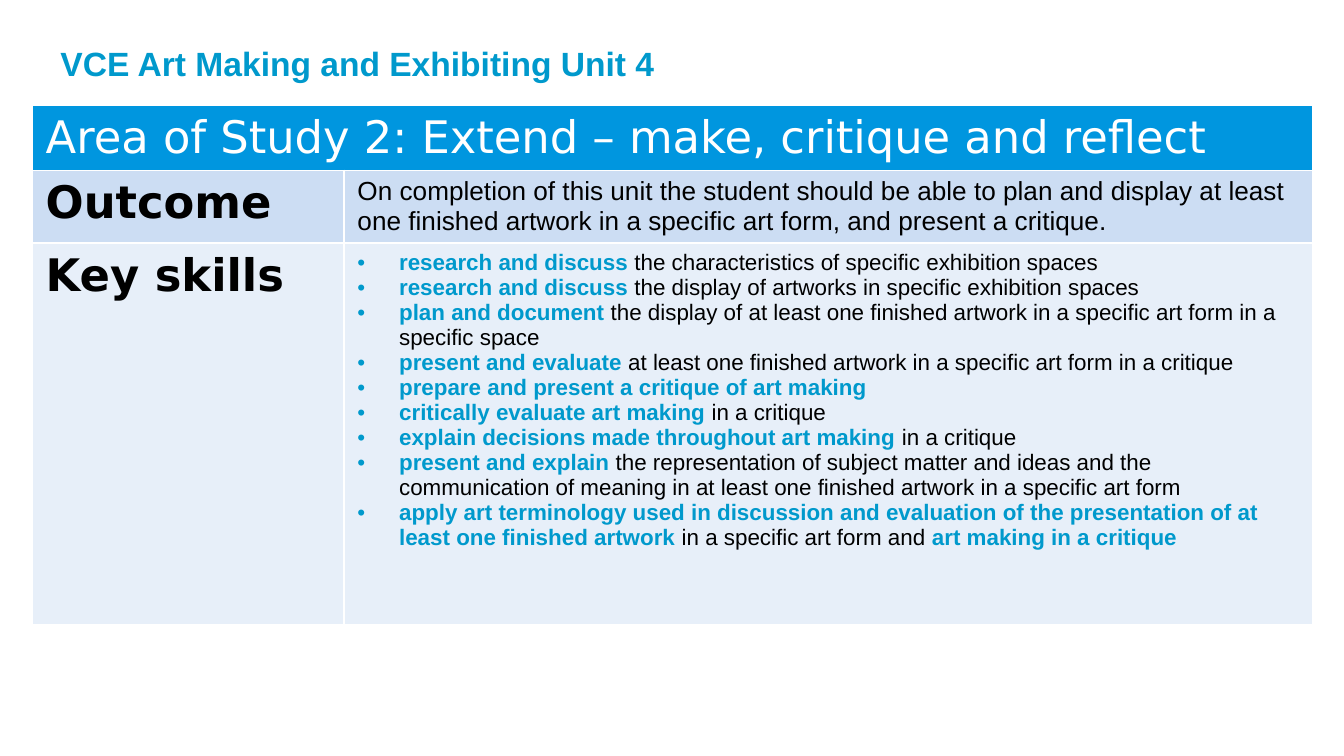
from dataclasses import dataclass

from lxml.etree import SubElement
from pptx import Presentation
from pptx.dml.color import RGBColor
from pptx.enum.text import MSO_ANCHOR, PP_ALIGN
from pptx.oxml.ns import qn
from pptx.table import _Cell as Cell
from pptx.util import Inches, Pt

WHITE = RGBColor(0xFF, 0xFF, 0xFF)
BLACK = RGBColor(0x00, 0x00, 0x00)
TEAL = RGBColor(0x00, 0x99, 0xCC)
HEADER_BLUE = RGBColor(0x00, 0x96, 0xDF)
OUTCOME_BLUE = RGBColor(0xCC, 0xDD, 0xF3)
SKILLS_BLUE = RGBColor(0xE7, 0xEF, 0xF9)
BODY_FONT = "Arial"
HEADING_FONT = "DejaVu Sans"
COLUMN_WIDTHS = (2.32, 7.21)
ROW_HEIGHTS = (0.48, 0.54, 2.84)


@dataclass(frozen=True)
class Entry:
    row: int
    column: int
    text: str
    fill: RGBColor
    font: str = HEADING_FONT
    size: int = 24
    color: RGBColor = BLACK
    bold: bool = False


@dataclass(frozen=True)
class Skill:
    action: str
    detail: str = ""
    closing: str = ""


ENTRIES = (
    Entry(0, 0, "Area of Study 2: Extend – make, critique and reflect", HEADER_BLUE, color=WHITE),
    Entry(1, 0, "Outcome", OUTCOME_BLUE, bold=True),
    Entry(1, 1, "On completion of this unit the student should be able to plan and display "
          "at least one finished artwork in a specific art form, and present a critique.",
          OUTCOME_BLUE, BODY_FONT, 14),
    Entry(2, 0, "Key skills", SKILLS_BLUE, bold=True),
)

SKILLS = (
    Skill("research and discuss ", "the characteristics of specific exhibition spaces"),
    Skill("research and discuss ", "the display of artworks in specific exhibition spaces"),
    Skill("plan and document ", "the display of at least one finished artwork in a specific "
          "art form in a specific space"),
    Skill("present and evaluate ", "at least one finished artwork in a specific art form in a critique"),
    Skill("prepare and present a critique of art making"),
    Skill("critically evaluate art making", " in a critique"),
    Skill("explain decisions made throughout art making ", "in a critique"),
    Skill("present and explain ", "the representation of subject matter and ideas and the "
          "communication of meaning in at least one finished artwork in a specific art form"),
    Skill("apply art terminology used in discussion and evaluation of the presentation of "
          "at least one finished artwork ", "in a specific art form and ",
          "art making in a critique"),
)


def set_fill(cell: Cell, color: RGBColor) -> None:
    cell.fill.solid()
    cell.fill.fore_color.rgb = color


def set_font(font, name: str, size: int, color: RGBColor, bold: bool) -> None:
    font.name = name
    font.size = Pt(size)
    font.color.rgb = color
    font.bold = bold


def add_bullet(paragraph, indent: float) -> None:
    properties = paragraph._p.get_or_add_pPr()
    properties.set("marL", str(Inches(indent)))
    properties.set("indent", str(-Inches(indent)))
    SubElement(properties, qn("a:buFont"), typeface=BODY_FONT)
    SubElement(properties, qn("a:buChar"), char="•")


def write_entry(cell: Cell, entry: Entry) -> None:
    set_fill(cell, entry.fill)
    paragraph = cell.text_frame.paragraphs[0]
    paragraph.text = entry.text
    set_font(paragraph.font, entry.font, entry.size, entry.color, entry.bold)


def write_skills(cell: Cell, skills: tuple[Skill, ...]) -> None:
    set_fill(cell, SKILLS_BLUE)
    frame = cell.text_frame
    for index, skill in enumerate(skills):
        paragraph = frame.add_paragraph() if index else frame.paragraphs[0]
        add_bullet(paragraph, 0.31)
        for text, emphasised in ((skill.action, True), (skill.detail, False), (skill.closing, True)):
            if text:
                run = paragraph.add_run()
                run.text = text
                set_font(run.font, BODY_FONT, 12, TEAL if emphasised else BLACK, emphasised)


def main() -> None:
    deck = Presentation()
    deck.slide_width = Inches(10)
    deck.slide_height = deck.slide_width * 9 // 16
    slide = deck.slides.add_slide(deck.slide_layouts[5])

    heading = slide.shapes.title
    heading.left, heading.top = Inches(0.35), Inches(0.27)
    heading.width, heading.height = Inches(7.01), Inches(0.4)
    heading.text_frame.vertical_anchor = MSO_ANCHOR.MIDDLE
    heading_line = heading.text_frame.paragraphs[0]
    heading_line.text = "VCE Art Making and Exhibiting Unit 4"
    heading_line.alignment = PP_ALIGN.LEFT
    set_font(heading_line.font, BODY_FONT, 18, TEAL, True)

    study = slide.shapes.add_table(
        len(ROW_HEIGHTS), len(COLUMN_WIDTHS), Inches(0.24), Inches(0.78),
        Inches(sum(COLUMN_WIDTHS)), Inches(sum(ROW_HEIGHTS))).table
    for column, width in zip(study.columns, COLUMN_WIDTHS):
        column.width = Inches(width)
    for row, height in zip(study.rows, ROW_HEIGHTS):
        row.height = Inches(height)
    study.cell(0, 0).merge(study.cell(0, 1))

    for entry in ENTRIES:
        write_entry(study.cell(entry.row, entry.column), entry)
    write_skills(study.cell(2, 1), SKILLS)
    deck.save("out.pptx")


if __name__ == "__main__":
    main()
